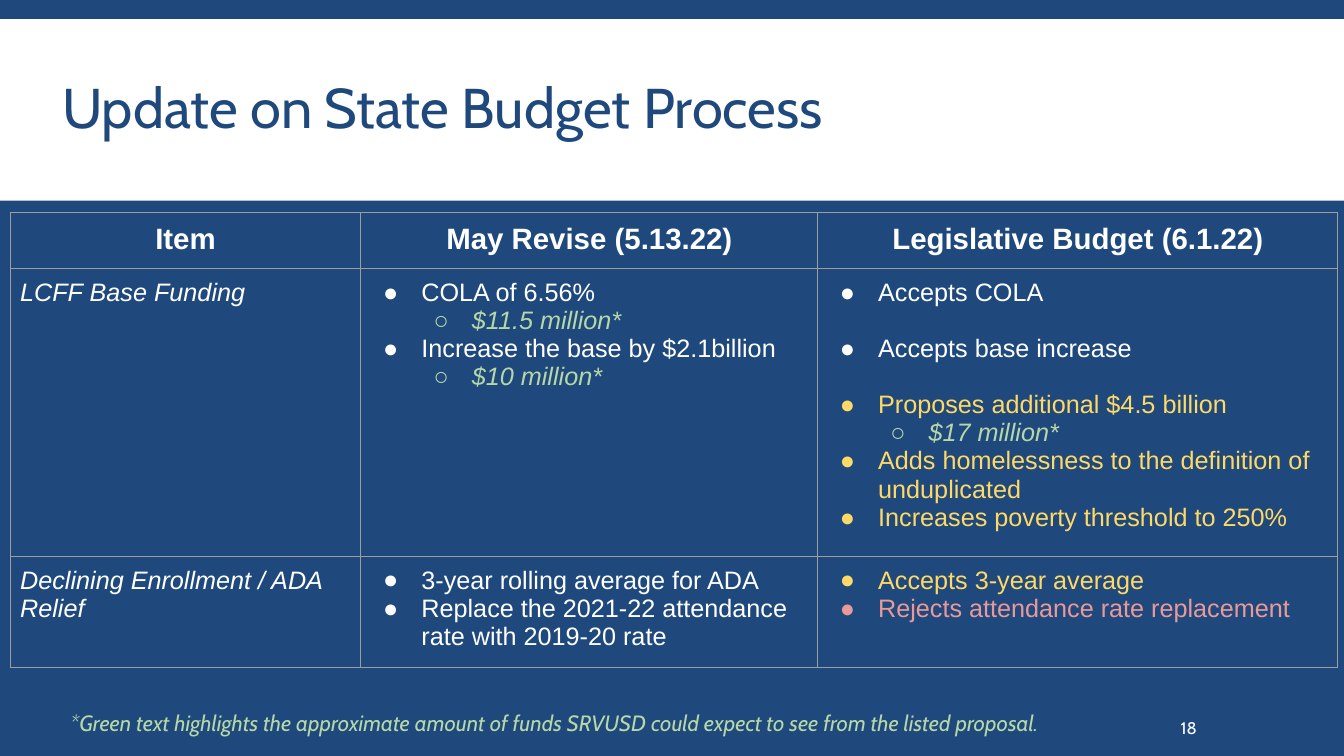
from pptx import Presentation
from pptx.dml.color import RGBColor
from pptx.enum.shapes import MSO_SHAPE as Shape
from pptx.enum.text import MSO_ANCHOR as Anchor, PP_ALIGN as Align
from pptx.oxml import parse_xml
from pptx.oxml.ns import nsdecls
from pptx.util import Inches, Pt

NAVY, WHITE, GRAY = "1F497D", "FFFFFF", "9E9E9E"
GREEN, YELLOW, PINK = "B6D7A8", "FFD966", "EA9999"
LINE_GAP = 20

TITLE = "Update on State Budget Process"
PAGE_NUMBER = "18"
FOOTNOTE = ("*Green text highlights the approximate amount of funds SRVUSD "
            "could expect to see from the listed proposal.")
HEADINGS = ["Item", "May Revise (5.13.22)", "Legislative Budget (6.1.22)"]
PROPOSALS = [
    ("LCFF Base Funding",
     [("COLA of 6.56%", 0, WHITE, 0),
      ("$11.5 million*", 1, GREEN, 0),
      ("Increase the base by $2.1billion", 0, WHITE, 0),
      ("$10 million*", 1, GREEN, 0)],
     [("Accepts COLA", 0, WHITE, LINE_GAP),
      ("Accepts base increase", 0, WHITE, LINE_GAP),
      ("Proposes additional $4.5 billion", 0, YELLOW, 0),
      ("$17 million*", 1, GREEN, 0),
      ("Adds homelessness to the definition of unduplicated", 0, YELLOW, 0),
      ("Increases poverty threshold to 250%", 0, YELLOW, 0)]),
    ("Declining Enrollment / ADA Relief",
     [("3-year rolling average for ADA", 0, WHITE, 0),
      ("Replace the 2021-22 attendance rate with 2019-20 rate", 0, WHITE, 0)],
     [("Accepts 3-year average", 0, YELLOW, 0),
      ("Rejects attendance rate replacement", 0, PINK, 0)]),
]
COLUMNS = [3.48, 4.53, 5.16]
ROWS = [0.53, 2.71, 1.03]
BULLETS = "●○"


def color(value):
    return RGBColor.from_string(value)


def write(paragraph, text, size, value, font="Arial", bold=False, italic=False):
    paragraph.text = text
    for run in paragraph.runs:
        run.font.size = Pt(size)
        run.font.name = font
        run.font.bold = bold
        run.font.italic = italic
        run.font.color.rgb = color(value)


def add_label(slide, box, text, size, value, insets, anchor, italic=False):
    frame = slide.shapes.add_textbox(*map(Inches, box)).text_frame
    frame.word_wrap = True
    frame.vertical_anchor = anchor
    (frame.margin_left, frame.margin_top,
     frame.margin_right, frame.margin_bottom) = map(Inches, insets)
    write(frame.paragraphs[0], text, size, value, "Cabin", italic=italic)
    return frame.paragraphs[0]


def add_bullet(paragraph, level, value):
    paragraph.level = level
    props = paragraph._p.get_or_add_pPr()
    props.set("marL", str(Inches(0.5 * (level + 1))))
    props.set("indent", str(-Inches(0.38)))
    for xml in (f'<a:buClr {nsdecls("a")}><a:srgbClr val="{value}"/></a:buClr>',
                f'<a:buFont {nsdecls("a")} typeface="Arial"/>',
                f'<a:buChar {nsdecls("a")} char="{BULLETS[level]}"/>'):
        props.append(parse_xml(xml))


def style_cell(cell):
    cell.margin_left = cell.margin_right = Inches(0.1)
    cell.margin_top = cell.margin_bottom = Inches(0.1)
    props = cell._tc.get_or_add_tcPr()
    for side in "LRTB":
        props.append(parse_xml(
            f'<a:ln{side} {nsdecls("a")} w="{Pt(0.75)}"><a:solidFill>'
            f'<a:srgbClr val="{GRAY}"/></a:solidFill></a:ln{side}>'))
    cell.fill.solid()
    cell.fill.fore_color.rgb = color(NAVY)


def fill_list(cell, points):
    frame = cell.text_frame
    for index, (text, level, value, gap) in enumerate(points):
        paragraph = frame.add_paragraph() if index else frame.paragraphs[0]
        write(paragraph, text, 18, value, italic=level == 1)
        paragraph.space_after = Pt(gap)
        add_bullet(paragraph, level, value)


def add_budget_table(slide):
    table = slide.shapes.add_table(
        len(ROWS), len(COLUMNS), Inches(0.1), Inches(2.11),
        Inches(sum(COLUMNS)), Inches(sum(ROWS))).table
    table.first_row = table.horz_banding = False
    for column, width in zip(table.columns, COLUMNS):
        column.width = Inches(width)
    for row, height in zip(table.rows, ROWS):
        row.height = Inches(height)
    for cell in table.iter_cells():
        style_cell(cell)
    for index, heading in enumerate(HEADINGS):
        paragraph = table.cell(0, index).text_frame.paragraphs[0]
        write(paragraph, heading, 21, WHITE, bold=True)
        paragraph.alignment = Align.CENTER
    for index, (item, *lists) in enumerate(PROPOSALS, 1):
        write(table.cell(index, 0).text_frame.paragraphs[0],
              item, 18, WHITE, italic=True)
        for column, points in enumerate(lists, 1):
            fill_list(table.cell(index, column), points)


def main():
    deck = Presentation()
    deck.slide_width, deck.slide_height = Inches(13.33), Inches(7.5)
    slide = deck.slides.add_slide(deck.slide_layouts[6])
    slide.background.fill.solid()
    slide.background.fill.fore_color.rgb = color(NAVY)

    band = slide.shapes.add_shape(
        Shape.RECTANGLE, 0, Inches(0.19), deck.slide_width, Inches(1.8))
    band.shadow.inherit = False
    band.fill.solid()
    band.fill.fore_color.rgb = color(WHITE)
    band.line.fill.background()

    title = add_label(slide, (0.52, 0.28, 10.7, 1.65), TITLE, 40, NAVY,
                      (0.1, 0.05, 0.1, 0.05), Anchor.MIDDLE)
    title.line_spacing = 0.85
    add_label(slide, (11.66, 7.02, 1.03, 0.4), PAGE_NUMBER, 12, WHITE,
              (0.05, 0.05, 0.1, 0.05), Anchor.MIDDLE)
    add_budget_table(slide)
    add_label(slide, (0.6, 6.94, 12.17, 0.4), FOOTNOTE, 15.8, GREEN,
              (0.1, 0.1, 0.1, 0.1), Anchor.TOP, italic=True)
    deck.save("out.pptx")


if __name__ == "__main__":
    main()
